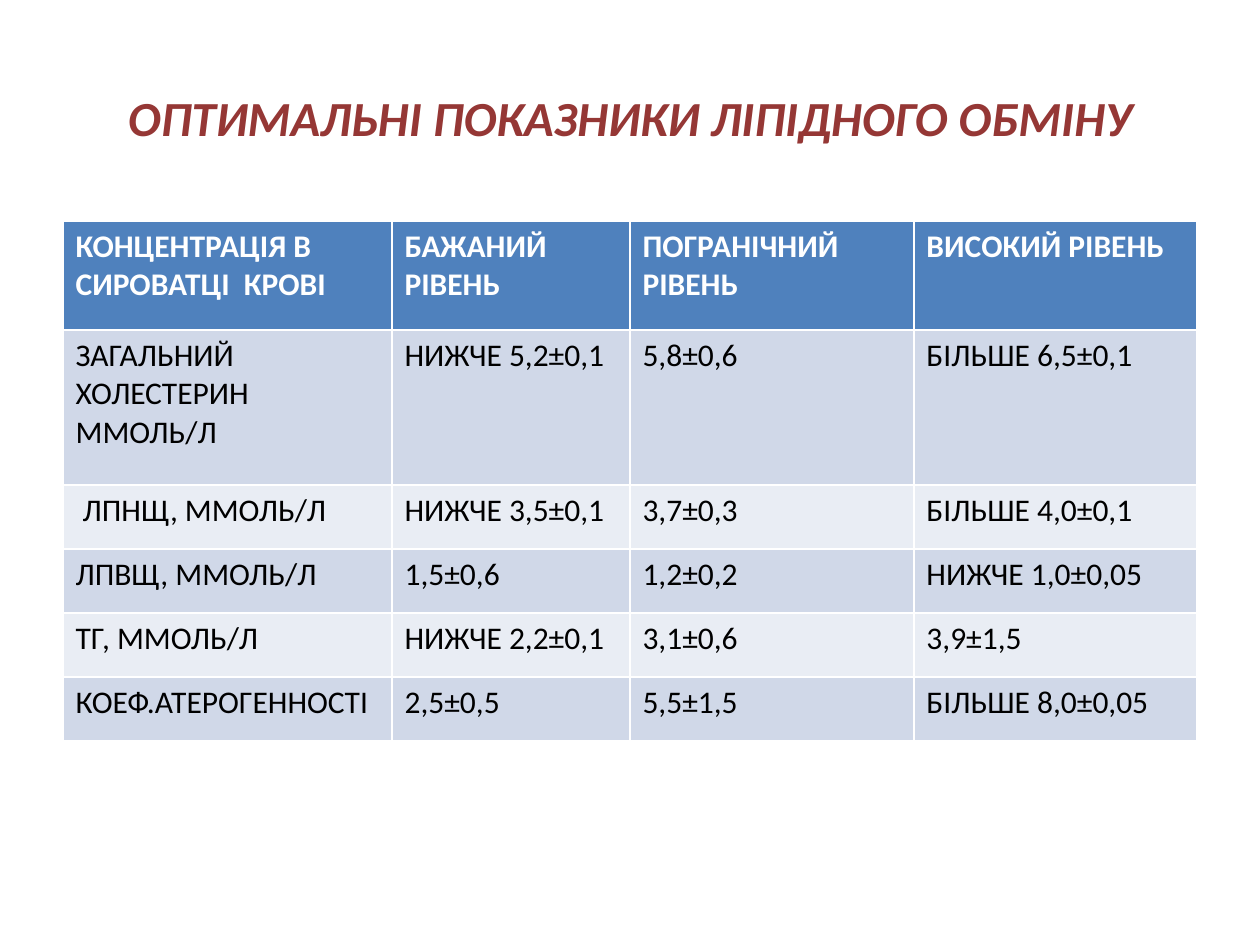
from pptx import Presentation
from pptx.dml.color import RGBColor
from pptx.enum.text import MSO_ANCHOR, PP_ALIGN
from pptx.util import Pt

PX = 914400 // 126
COLORS = {
    "title": "953735",
    "header": "4F81BD",
    "header_text": "FFFFFF",
    "band_dark": "D0D8E8",
    "band_light": "E9EDF4",
    "text": "000000",
}
COLS = [329, 238, 284, 283]
HEIGHTS = [109, 155, 64, 64, 64, 64]
ROWS = [
    ["КОНЦЕНТРАЦІЯ В СИРОВАТЦІ  КРОВІ", "БАЖАНИЙ РІВЕНЬ", "ПОГРАНІЧНИЙ РІВЕНЬ", "ВИСОКИЙ РІВЕНЬ"],
    ["ЗАГАЛЬНИЙ\nХОЛЕСТЕРИН ММОЛЬ/Л", "НИЖЧЕ 5,2±0,1", "5,8±0,6", "БІЛЬШЕ 6,5±0,1"],
    [" ЛПНЩ, ММОЛЬ/Л", "НИЖЧЕ 3,5±0,1", "3,7±0,3", "БІЛЬШЕ 4,0±0,1"],
    ["ЛПВЩ, ММОЛЬ/Л", "1,5±0,6", "1,2±0,2", "НИЖЧЕ 1,0±0,05"],
    ["ТГ, ММОЛЬ/Л", "НИЖЧЕ 2,2±0,1", "3,1±0,6", "3,9±1,5"],
    ["КОЕФ.АТЕРОГЕННОСТІ", "2,5±0,5", "5,5±1,5", "БІЛЬШЕ 8,0±0,05"],
]


def add_run(p, text, size, color, bold=False, italic=False):
    r = p.add_run()
    r.text = text
    r.font.name = "Calibri"
    r.font.size = Pt(size)
    r.font.bold = bold
    r.font.italic = italic
    r.font.color.rgb = RGBColor.from_string(COLORS[color])


prs = Presentation()
prs.slide_width, prs.slide_height = 1260 * PX, 945 * PX
s = prs.slides.add_slide(prs.slide_layouts[5])

title = s.shapes.title
title.left, title.top, title.width, title.height = [v * PX for v in (63, 38, 1134, 157)]
tf = title.text_frame
tf.vertical_anchor = MSO_ANCHOR.MIDDLE
p = tf.paragraphs[0]
p.alignment = PP_ALIGN.CENTER
add_run(p, "ОПТИМАЛЬНІ ПОКАЗНИКИ ЛІПІДНОГО ОБМІНУ", 28, "title", True, True)

table = s.shapes.add_table(
    len(ROWS), len(COLS), 63 * PX, 221 * PX, sum(COLS) * PX, sum(HEIGHTS) * PX
).table
for column, width in zip(table.columns, COLS):
    column.width = width * PX

for i, (row, height) in enumerate(zip(ROWS, HEIGHTS)):
    table.rows[i].height = height * PX
    header = i == 0
    fill = "header" if header else "band_dark" if i % 2 else "band_light"
    for j, text in enumerate(row):
        cell = table.cell(i, j)
        cell.fill.solid()
        cell.fill.fore_color.rgb = RGBColor.from_string(COLORS[fill])
        tf = cell.text_frame
        for n, line in enumerate(text.split("\n")):
            p = tf.add_paragraph() if n else tf.paragraphs[0]
            add_run(p, line, 18, "header_text" if header else "text", header)

prs.save("out.pptx")
